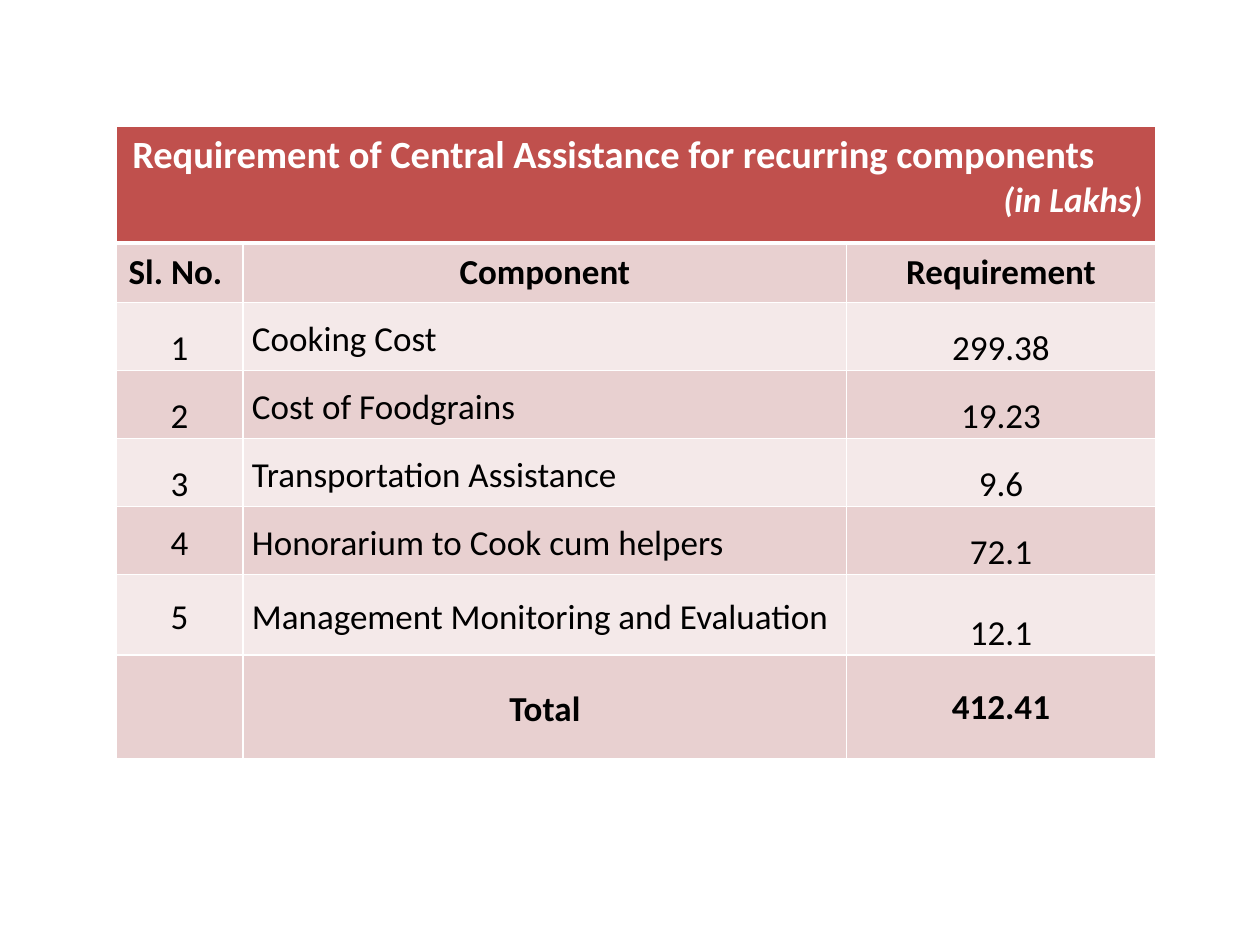
import pptx
import pptx.util
import pptx.dml.color
import pptx.enum.text
import pptx.oxml.ns
import lxml.etree as etree

Inches = pptx.util.Inches
Align = pptx.enum.text.PP_ALIGN
Anchor = pptx.enum.text.MSO_ANCHOR

TITLE = "Requirement of Central Assistance for recurring components"
UNIT = "(in Lakhs)"
HEADINGS = ["Sl. No. ", "Component", "Requirement"]
COMPONENTS = [
    ("1", "Cooking Cost", "299.38"),
    ("2", "Cost of Foodgrains", "19.23"),
    ("3", "Transportation Assistance", "9.6"),
    ("4", "Honorarium to Cook cum helpers", "72.1"),
    ("5", "Management Monitoring and Evaluation", "12.1"),
]
TOTAL = ["", "Total", "412.41"]

COLUMN_WIDTHS = [1.01, 4.79, 2.45]
ROW_HEIGHTS = [0.93, 0.47] + [0.54] * 4 + [0.64, 0.82]
BOTTOM_NUMBERS = {"1", "2", "3"}

THEME = {
    "font": "Calibri",
    "title_size": 22,
    "body_size": 20,
    "title_fill": "C0504D",
    "bands": ["F4E9E9", "E8D0D0"],
    "light": "FFFFFF",
    "dark": "000000",
    "thin": 1,
    "thick": 3,
}


def rgb(value):
    return pptx.dml.color.RGBColor.from_string(value)


def add_span(para, text, size, color, bold=False, italic=False):
    span = para.add_run()
    span.text = text
    font = span.font
    font.name, font.size = THEME["font"], pptx.util.Pt(size)
    font.bold, font.italic = bold, italic
    font.color.rgb = rgb(color)


def style_cell(cell, fill, top, bottom):
    properties = cell._tc.get_or_add_tcPr()
    widths = {"L": THEME["thin"], "R": THEME["thin"], "T": top, "B": bottom}
    for side, width in widths.items():
        line = etree.SubElement(properties, pptx.oxml.ns.qn(f"a:ln{side}"),
                                w=str(pptx.util.Pt(width)))
        solid = etree.SubElement(line, pptx.oxml.ns.qn("a:solidFill"))
        etree.SubElement(solid, pptx.oxml.ns.qn("a:srgbClr"), val=THEME["light"])
    cell.fill.solid()
    cell.fill.fore_color.rgb = rgb(fill)


def set_margins(cell, side, top):
    cell.margin_left = cell.margin_right = Inches(side)
    cell.margin_top, cell.margin_bottom = Inches(top), Inches(0)


def write_title(cell):
    frame = cell.text_frame
    para = frame.paragraphs[0]
    para.alignment = Align.LEFT
    para._p.get_or_add_pPr().set("marL", str(Inches(0.03)))
    add_span(para, TITLE, THEME["title_size"], THEME["light"], bold=True)
    para = frame.add_paragraph()
    para.alignment = Align.RIGHT
    add_span(para, UNIT, THEME["body_size"], THEME["light"], bold=True, italic=True)


def write_body(cell, text, column, heading, total):
    emphasis = heading or total
    figure = column == 2 and not heading
    set_margins(cell, 0.01 if figure else 0.07, 0.01 if figure else 0)
    low = not emphasis and (figure or text in BOTTOM_NUMBERS)
    cell.vertical_anchor = Anchor.BOTTOM if low else Anchor.MIDDLE
    para = cell.text_frame.paragraphs[0]
    para.alignment = Align.LEFT if column == 1 and not emphasis else Align.CENTER
    if not heading and not figure:
        para.line_spacing = 1.15
    if text:
        add_span(para, text, THEME["body_size"], THEME["dark"], bold=emphasis)


def main():
    deck = pptx.Presentation()
    deck.slide_width, deck.slide_height = Inches(10), Inches(7.5)
    page = deck.slides.add_slide(deck.slide_layouts[6])
    rows = [HEADINGS, *COMPONENTS, TOTAL]
    table = page.shapes.add_table(
        len(ROW_HEIGHTS), len(COLUMN_WIDTHS), Inches(0.92), Inches(1),
        Inches(sum(COLUMN_WIDTHS)), Inches(sum(ROW_HEIGHTS))).table
    for column, width in zip(table.columns, COLUMN_WIDTHS):
        column.width = Inches(width)
    for row, height in zip(table.rows, ROW_HEIGHTS):
        row.height = Inches(height)

    for number in range(len(ROW_HEIGHTS)):
        fill = THEME["bands"][number % 2] if number else THEME["title_fill"]
        top = THEME["thick"] if number == 1 else THEME["thin"]
        bottom = THEME["thick"] if number == 0 else THEME["thin"]
        for column in range(len(COLUMN_WIDTHS)):
            style_cell(table.cell(number, column), fill, top, bottom)

    table.cell(0, 0).merge(table.cell(0, len(COLUMN_WIDTHS) - 1))
    write_title(table.cell(0, 0))
    for number, texts in enumerate(rows, start=1):
        for column, text in enumerate(texts):
            write_body(table.cell(number, column), text, column,
                       heading=number == 1, total=number == len(rows))

    deck.save("out.pptx")


if __name__ == "__main__":
    main()
